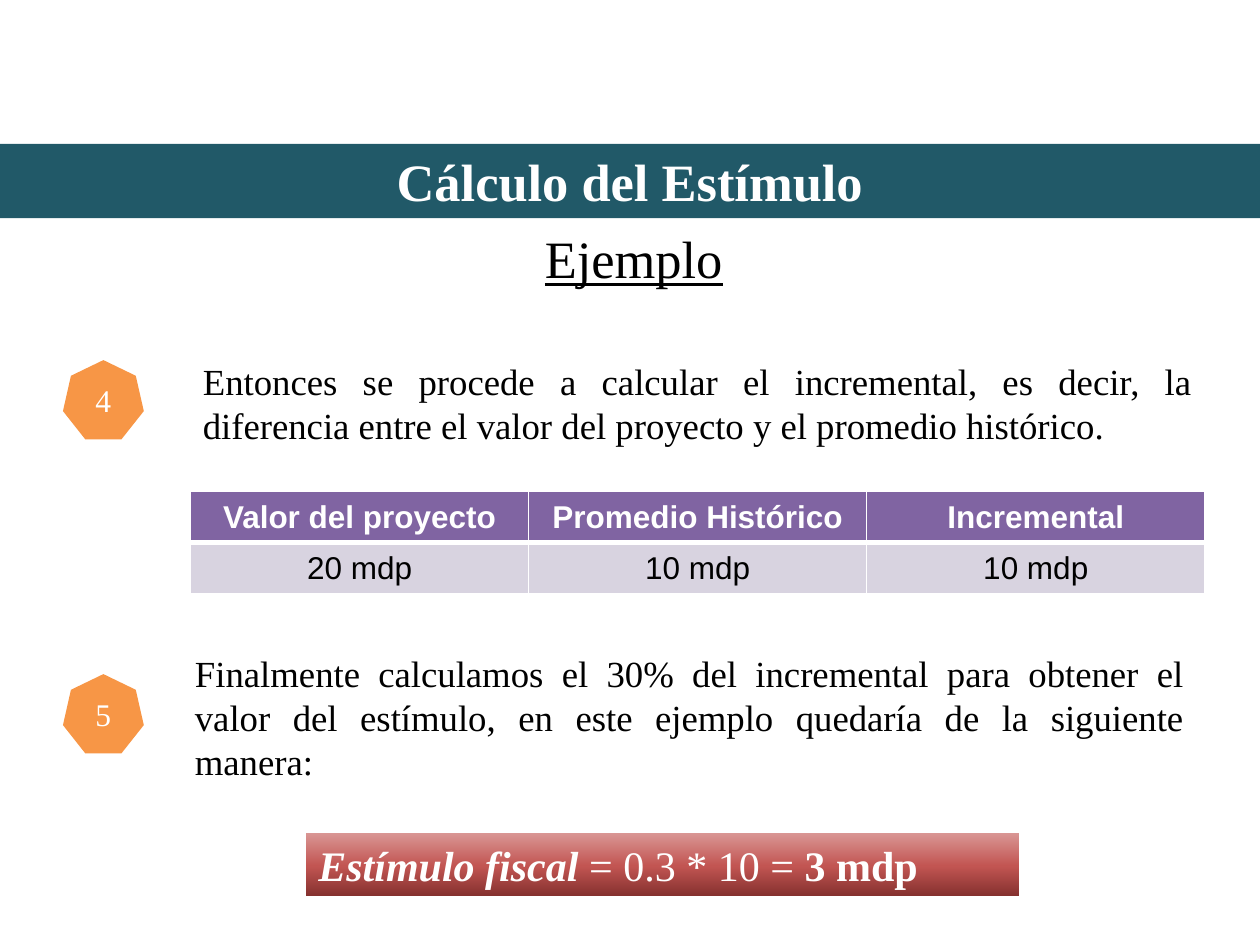
from copy import deepcopy
from dataclasses import dataclass

from lxml import etree
from pptx import Presentation
from pptx import util as u
from pptx.dml import color
from pptx.enum import shapes, text
from pptx.oxml import ns


@dataclass(frozen=True)
class Theme:
    serif: str = "Times New Roman"
    sans: str = "Arial"
    white: str = "FFFFFF"
    black: str = "000000"
    band: str = "215968"
    badge: str = "F79646"
    header: str = "8064A2"
    row: str = "D8D3E0"
    gradient: tuple = ((0, "85312F"), (0.48, "C25552"), (1, "D99694"))
    heading: int = 30
    formula: int = 24
    body: int = 21
    label: int = 18


THEME = Theme()
BODY_WIDTH = 20.45
BADGE_LEFT, BADGE_WIDTH, BADGE_HEIGHT = 1.27, 1.63, 1.6


def rgb(value):
    return color.RGBColor.from_string(value)


def box(left, top, width, height):
    return [u.Cm(length) for length in (left, top, width, height)]


def format_paragraph(paragraph, size, ink, name=THEME.serif, bold=False,
                     align=text.PP_ALIGN.CENTER):
    paragraph.alignment = align
    font = paragraph.font
    font.name, font.size, font.bold = name, u.Pt(size), bold
    font.color.rgb = rgb(ink)


def add_shape(slide, kind, bounds, fill=None):
    shape = slide.shapes.add_shape(kind, *box(*bounds))
    shape.shadow.inherit = False
    shape.line.fill.background()
    if fill:
        shape.fill.solid()
        shape.fill.fore_color.rgb = rgb(fill)
    return shape


def add_band(slide, words):
    shape = add_shape(slide, shapes.MSO_SHAPE.RECTANGLE, (0, 2.9, 25.4, 1.5), THEME.band)
    shape.text_frame.text = words
    format_paragraph(shape.text_frame.paragraphs[0], THEME.heading, THEME.white, bold=True)


def format_title(slide, words):
    title = slide.shapes.title
    title.left, title.top, title.width, title.height = box(1.27, 4.19, 23.01, 2.01)
    title.text_frame.text = words
    title.text_frame.vertical_anchor = text.MSO_ANCHOR.MIDDLE
    paragraph = title.text_frame.paragraphs[0]
    format_paragraph(paragraph, THEME.heading, THEME.black)
    paragraph.font.underline = True


def add_step(slide, number, words, badge_top, text_bounds):
    badge = add_shape(slide, shapes.MSO_SHAPE.HEPTAGON,
                      (BADGE_LEFT, badge_top, BADGE_WIDTH, BADGE_HEIGHT), THEME.badge)
    badge.text_frame.text = str(number)
    format_paragraph(badge.text_frame.paragraphs[0], THEME.label, THEME.white)

    frame = slide.shapes.add_textbox(*box(*text_bounds)).text_frame
    frame.word_wrap = True
    frame.vertical_anchor = text.MSO_ANCHOR.MIDDLE
    frame.text = words
    format_paragraph(frame.paragraphs[0], THEME.body, THEME.black,
                     align=text.PP_ALIGN.JUSTIFY)


def add_borders(cell, widths):
    properties = cell._tc.get_or_add_tcPr()
    for side, width in widths.items():
        line = etree.SubElement(properties, ns.qn(f"a:ln{side}"), w=str(u.Pt(width)))
        fill = etree.SubElement(line, ns.qn("a:solidFill"))
        etree.SubElement(fill, ns.qn("a:srgbClr"), val=THEME.white)


def add_table(slide, rows, bounds):
    table = slide.shapes.add_table(len(rows), len(rows[0]), *box(*bounds)).table
    for row_index, row in enumerate(rows):
        is_header = row_index == 0
        for column_index, words in enumerate(row):
            cell = table.cell(row_index, column_index)
            add_borders(cell, {"L": 1, "R": 1, "T": 1 if is_header else 3,
                               "B": 3 if is_header else 1})
            cell.fill.solid()
            cell.fill.fore_color.rgb = rgb(THEME.header if is_header else THEME.row)
            cell.vertical_anchor = text.MSO_ANCHOR.MIDDLE
            cell.text = words
            format_paragraph(cell.text_frame.paragraphs[0], THEME.label,
                             THEME.white if is_header else THEME.black,
                             THEME.sans, is_header)


def fill_gradient(shape, stops, angle):
    shape.fill.gradient()
    shape.fill.gradient_angle = angle
    stop_list = shape.fill._fill._gradFill.find(ns.qn("a:gsLst"))
    stop_list.append(deepcopy(stop_list[-1]))
    for stop, (position, value) in zip(shape.fill.gradient_stops, stops):
        stop.position = position
        stop.color.rgb = rgb(value)


def add_formula(slide, parts, bounds):
    shape = add_shape(slide, shapes.MSO_SHAPE.RECTANGLE, bounds)
    fill_gradient(shape, THEME.gradient, 90)
    shape.text_frame.vertical_anchor = text.MSO_ANCHOR.TOP
    paragraph = shape.text_frame.paragraphs[0]
    format_paragraph(paragraph, THEME.formula, THEME.white, align=text.PP_ALIGN.LEFT)
    for words, bold, italic in parts:
        run = paragraph.add_run()
        run.text = words
        run.font.bold, run.font.italic = bold, italic


def main():
    presentation = Presentation()
    presentation.slide_width, presentation.slide_height = u.Cm(25.4), u.Cm(19.05)
    slide = presentation.slides.add_slide(presentation.slide_layouts[5])

    format_title(slide, "Ejemplo")
    add_band(slide, "Cálculo del Estímulo")
    add_step(slide, 4,
             "Entonces se procede a calcular el incremental, es decir, la diferencia "
             "entre el valor del proyecto y el promedio histórico.",
             7.26, (3.84, 7.02, BODY_WIDTH, 2.21))
    add_table(slide,
              (("Valor del proyecto", "Promedio Histórico", "Incremental"),
               ("20 mdp", "10 mdp", "10 mdp")),
              (3.84, 9.91, BODY_WIDTH, 2.06))
    add_step(slide, 5,
             "Finalmente calculamos el 30% del incremental para obtener el valor del "
             "estímulo, en este ejemplo quedaría de la siguiente manera:",
             13.59, (3.68, 13.65, BODY_WIDTH, 1.6))
    add_formula(slide,
                (("Estímulo fiscal ", True, True),
                 ("= 0.3 * 10 = ", False, False),
                 ("3 mdp", True, False)),
                (6.17, 16.79, 14.38, 1.27))

    presentation.save("out.pptx")


if __name__ == "__main__":
    main()
